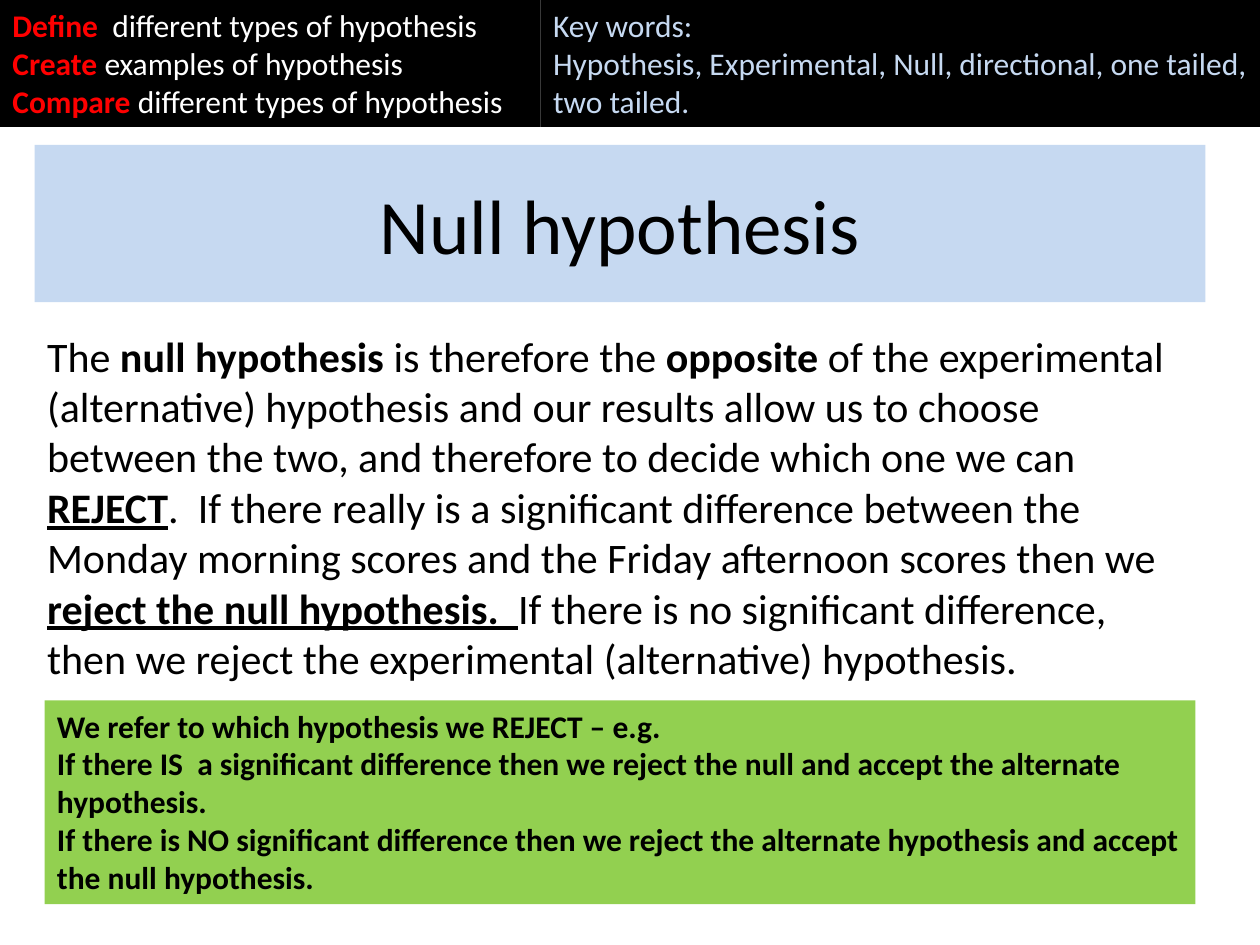
from dataclasses import dataclass

from pptx import Presentation
from pptx.dml.color import RGBColor
from pptx.enum.text import MSO_ANCHOR, PP_ALIGN
from pptx.util import Cm, Pt

CENTER = PP_ALIGN.CENTER
TOP, MIDDLE = MSO_ANCHOR.TOP, MSO_ANCHOR.MIDDLE
TITLE_ONLY = 5


@dataclass(frozen=True)
class Theme:
    font: str = "Calibri"
    black: str = "000000"
    white: str = "FFFFFF"
    red: str = "FF0000"
    pale_blue: str = "C6D9F1"
    green: str = "92D050"
    title_size: int = 44
    body_size: int = 24
    note_size: int = 18


THEME = Theme()
PAGE_WIDTH, PAGE_HEIGHT = 25.4, 19.05
BANNER_HEIGHT = 2.56
GOALS_WIDTH = 10.9
PANEL_LEFT, PANEL_WIDTH = 0.7, 23.6

GOALS = [
    ("Define ", " different types of hypothesis"),
    ("Create ", "examples of hypothesis"),
    ("Compare ", "different types of hypothesis"),
]
KEY_WORDS = [
    "Key words:",
    "Hypothesis, Experimental, Null, directional, one tailed, two tailed.",
]
PLAIN, BOLD, KEY = {}, {"bold": True}, {"bold": True, "underline": True}
EXPLANATION = [
    ("The ", PLAIN),
    ("null hypothesis", BOLD),
    (" is therefore the ", PLAIN),
    ("opposite ", BOLD),
    ("of the experimental (alternative) hypothesis and our results allow us to "
     "choose between the two, and therefore to decide which one we can ", PLAIN),
    ("REJECT", KEY),
    (".  If there really is a significant difference between the Monday morning "
     "scores and the Friday afternoon scores then we ", PLAIN),
    ("reject the null hypothesis.  ", KEY),
    ("If there is no significant difference, then we reject the experimental "
     "(alternative) hypothesis.", PLAIN),
]
SUMMARY = [
    "We refer to which hypothesis we REJECT – e.g.",
    "If there IS  a significant difference then we reject the null and accept "
    "the alternate hypothesis.",
    "If there is NO significant difference then we reject the alternate "
    "hypothesis and accept the null hypothesis.",
]


def paint(shape, color):
    shape.fill.solid()
    shape.fill.fore_color.rgb = RGBColor.from_string(color)


def add_span(para, text, size, color, bold=False, underline=False):
    span = para.add_run()
    span.text = text
    font = span.font
    font.name, font.size = THEME.font, Pt(size)
    font.bold, font.underline = bold, underline
    font.color.rgb = RGBColor.from_string(color)


def add_panel(page, left, top, width, height, fill, size, color, paragraphs):
    """Add a filled text box; each paragraph is a list of (text, style) spans."""
    box = page.shapes.add_textbox(Cm(left), Cm(top), Cm(width), Cm(height))
    paint(box, fill)
    frame = box.text_frame
    frame.word_wrap = True
    frame.vertical_anchor = TOP
    for index, spans in enumerate(paragraphs):
        para = frame.add_paragraph() if index else frame.paragraphs[0]
        for text, style in spans:
            add_span(para, text, **{"size": size, "color": color, **style})


def set_title(page, text):
    title = page.shapes.title
    title.left, title.top = Cm(PANEL_LEFT), Cm(2.92)
    title.width, title.height = Cm(PANEL_WIDTH), Cm(3.17)
    paint(title, THEME.pale_blue)
    title.text_frame.vertical_anchor = MIDDLE
    para = title.text_frame.paragraphs[0]
    para.alignment = CENTER
    add_span(para, text, THEME.title_size, THEME.black)


def main():
    deck = Presentation()
    deck.slide_width, deck.slide_height = Cm(PAGE_WIDTH), Cm(PAGE_HEIGHT)
    page = deck.slides.add_slide(deck.slide_layouts[TITLE_ONLY])

    set_title(page, "Null hypothesis")
    verb_style = {"bold": True, "color": THEME.red}
    add_panel(page, 0, 0, GOALS_WIDTH, BANNER_HEIGHT,
              THEME.black, THEME.note_size, THEME.white,
              [[(verb, verb_style), (rest, PLAIN)] for verb, rest in GOALS])
    add_panel(page, GOALS_WIDTH, 0, PAGE_WIDTH - GOALS_WIDTH, BANNER_HEIGHT,
              THEME.black, THEME.note_size, THEME.pale_blue,
              [[(line, PLAIN)] for line in KEY_WORDS])
    add_panel(page, PANEL_LEFT, 6.53, PANEL_WIDTH, 8.2,
              THEME.white, THEME.body_size, THEME.black, [EXPLANATION])
    add_panel(page, 0.9, 14.12, 23.2, 4.11,
              THEME.green, THEME.note_size, THEME.black,
              [[(line, BOLD)] for line in SUMMARY])

    deck.save("out.pptx")


if __name__ == "__main__":
    main()
